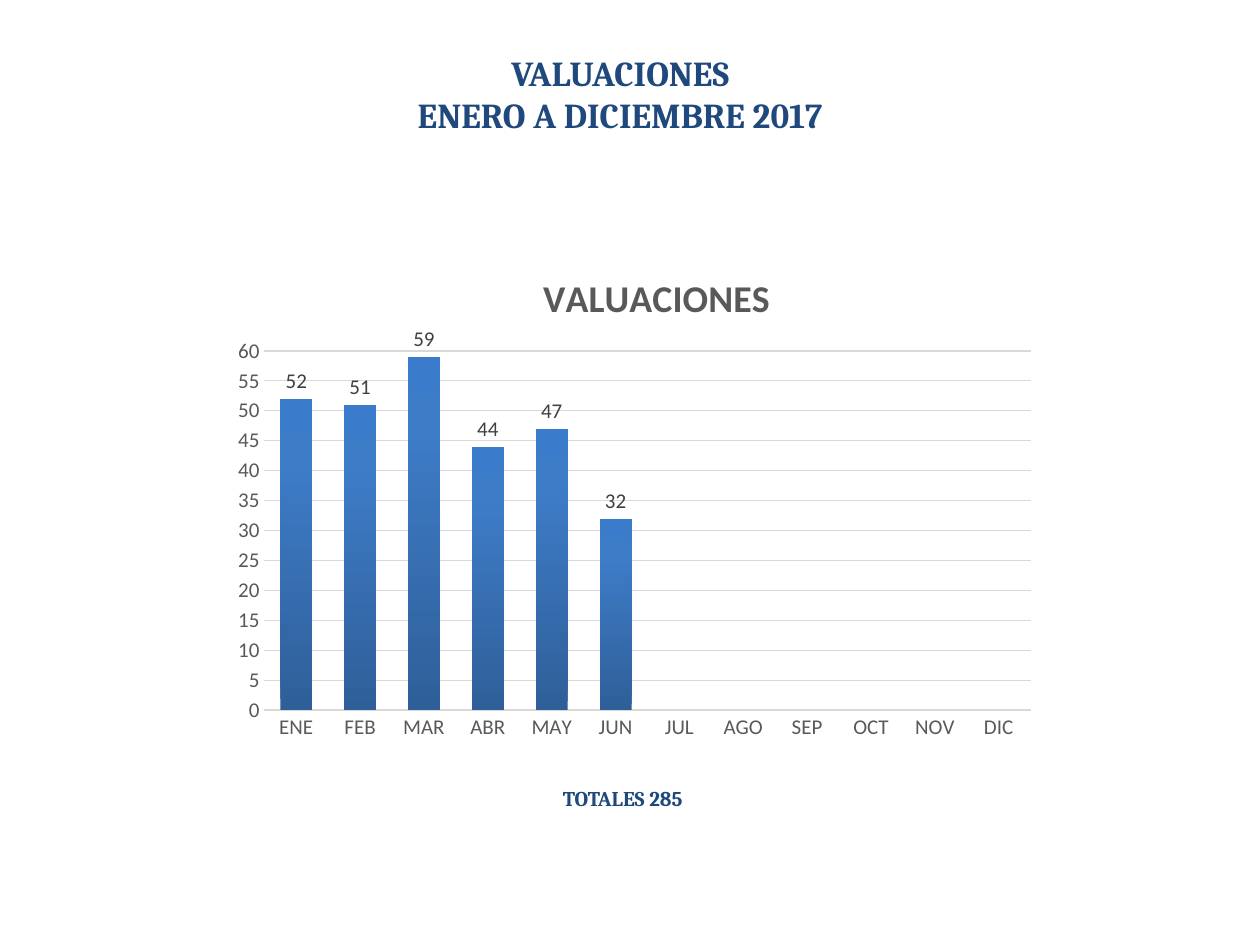
from lxml.etree import SubElement
from pptx import Presentation
from pptx.chart.data import CategoryChartData
from pptx.dml.color import RGBColor
from pptx.enum.chart import XL_CHART_TYPE, XL_LABEL_POSITION, XL_TICK_MARK
from pptx.enum.text import PP_ALIGN
from pptx.oxml import parse_xml
from pptx.oxml.ns import nsdecls, qn
from pptx.util import Cm, Pt


def style_font(font, name, size, color, bold=False):
    font.name = name
    font.size = Pt(size)
    font.bold = bold
    font.color.rgb = RGBColor.from_string(color)


def set_layout(element, **values):
    """Place a chart part by fractions of the chart area."""
    for old_layout in element.findall(qn("c:layout")):
        element.remove(old_layout)
    layout = parse_xml(f'<c:layout {nsdecls("c")}/>')
    # The layout follows the text of a title and comes first elsewhere
    element.insert(0 if element.find(qn("c:tx")) is None else 1, layout)
    manual = SubElement(layout, qn("c:manualLayout"))
    for tag, value in values.items():
        SubElement(manual, qn(f"c:{tag}")).set("val", str(value))


presentation = Presentation()
presentation.slide_width = Cm(25.4)
presentation.slide_height = Cm(19.05)
slide = presentation.slides.add_slide(presentation.slide_layouts[6])

# Heading and total
texts = [
    (["TOTALES 285"], 11.1, 15.72, 3.99, 0.76, 12, PP_ALIGN.LEFT, True),
    (["VALUACIONES", "ENERO A DICIEMBRE 2017"],
     7.92, 0.91, 9.17, 1.96, 20, PP_ALIGN.CENTER, False),
]
for lines, left, top, width, height, size, alignment, wrap in texts:
    box = slide.shapes.add_textbox(Cm(left), Cm(top), Cm(width), Cm(height))
    frame = box.text_frame
    frame.word_wrap = wrap
    frame.text = "\n".join(lines)
    for paragraph in frame.paragraphs:
        paragraph.alignment = alignment
        style_font(paragraph.font, "Cambria", size, "1F497D", True)

# Monthly chart
chart_data = CategoryChartData()
chart_data.categories = ["ENE", "FEB", "MAR", "ABR", "MAY", "JUN",
                         "JUL", "AGO", "SEP", "OCT", "NOV", "DIC"]
chart_data.add_series("Series 1", [52, 51, 59, 44, 47, 32] + [None] * 6)
chart = slide.shapes.add_chart(
    XL_CHART_TYPE.COLUMN_CLUSTERED,
    Cm(4.5), Cm(4.93), Cm(16.61), Cm(10.21), chart_data).chart
style_font(chart.font, "Calibri", 10, "000000")
chart.has_legend = False

# Chart title
chart.has_title = True
title_paragraph = chart.chart_title.text_frame.paragraphs[0]
title_paragraph.text = "VALUACIONES"
style_font(title_paragraph.font, "Calibri", 21.6, "595959", True)
set_layout(chart.chart_title._element,
           xMode="edge", yMode="edge", x=0.38, y=0.04)
set_layout(chart._chartSpace.chart.plotArea,
           layoutTarget="inner", xMode="edge", yMode="edge",
           x=0.05, y=0.21, w=0.93, h=0.71)

# Axes
for axis in (chart.category_axis, chart.value_axis):
    axis.major_tick_mark = XL_TICK_MARK.NONE
    axis.minor_tick_mark = XL_TICK_MARK.NONE
    style_font(axis.tick_labels.font, "Calibri", 12, "595959")
category_line = chart.category_axis.format.line
category_line.width = Pt(1)
category_line.color.rgb = RGBColor.from_string("D9D9D9")
value_axis = chart.value_axis
value_axis.minimum_scale = 0
value_axis.maximum_scale = 60
value_axis.major_unit = 5
value_axis.format.line.fill.background()
grid_line = value_axis.major_gridlines.format.line
grid_line.width = Pt(0.75)
grid_line.color.rgb = RGBColor.from_string("D9D9D9")

# Columns, shaded from bottom to top
plot = chart.plots[0]
plot.vary_by_categories = False
plot.gap_width = 100
plot.overlap = -24
series = plot.series[0]
series.invert_if_negative = False
stops = "".join(
    f'<a:gs pos="{position * 1000}"><a:srgbClr val="{color}"/></a:gs>'
    for position, color in [(0, "2F5F99"), (80, "3D7CC7"), (100, "3A7CCB")])
series.format.fill.background()
properties = series._element.spPr
properties.replace(properties.find(qn("a:noFill")), parse_xml(
    f'<a:gradFill {nsdecls("a")} rotWithShape="1"><a:gsLst>{stops}</a:gsLst>'
    '<a:lin ang="16200000" scaled="0"/></a:gradFill>'))

# Value labels
labels = series.data_labels
labels.show_value = True
labels.position = XL_LABEL_POSITION.OUTSIDE_END
style_font(labels.font, "Calibri", 12, "404040")

presentation.save("out.pptx")
